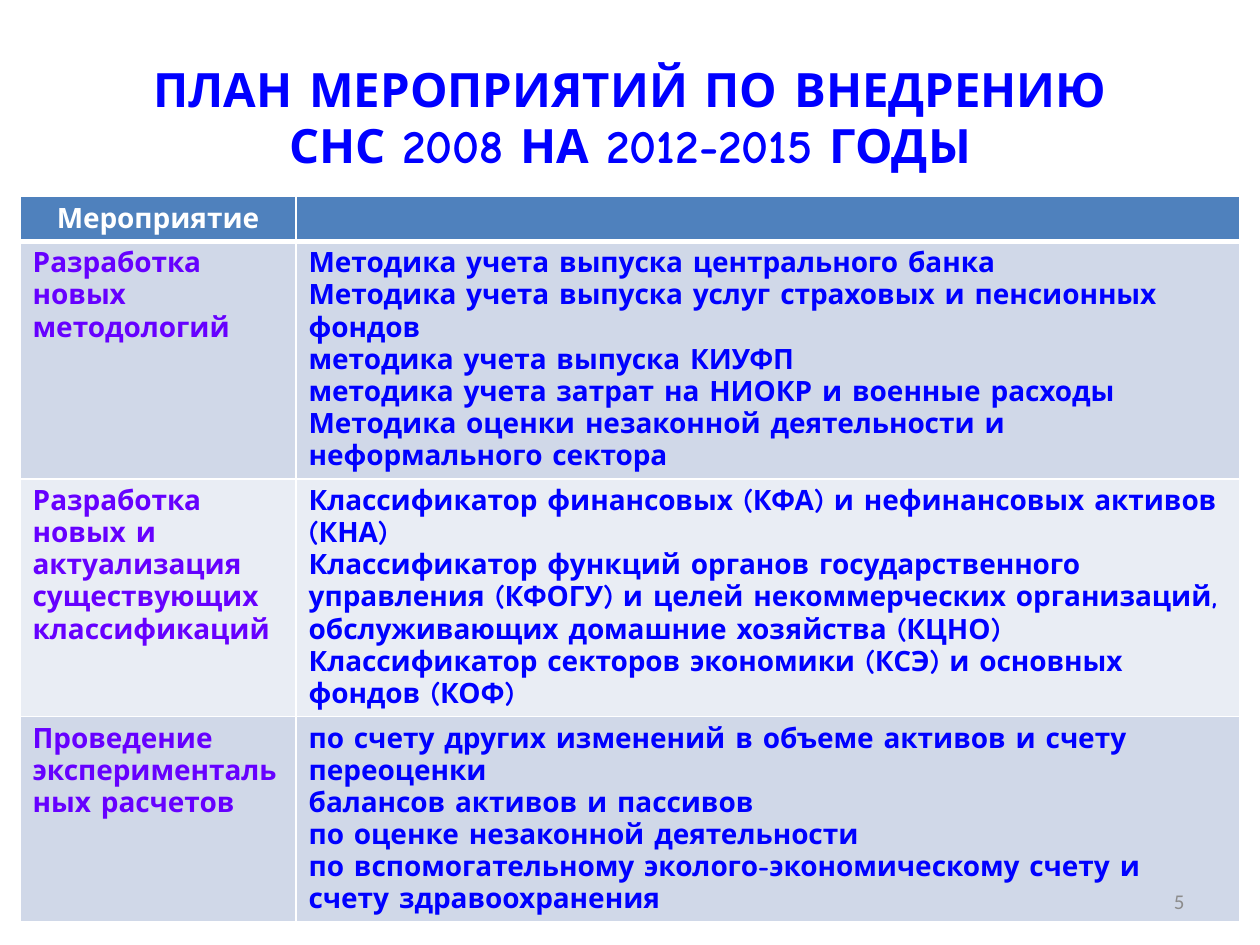
from lxml.etree import SubElement
from pptx import Presentation
from pptx.dml.color import RGBColor
from pptx.enum.text import MSO_ANCHOR, PP_ALIGN
from pptx.oxml.ns import qn
from pptx.util import Inches, Pt

TITLE = "ПЛАН МЕРОПРИЯТИЙ ПО ВНЕДРЕНИЮ\vСНС 2008 НА 2012-2015 ГОДЫ"
PAGE_NUMBER = "5"
HEADER = ("Мероприятие", "")
MEASURES = [
    ("Разработка новых методологий", [
        "Методика учета выпуска центрального банка",
        "Методика учета выпуска услуг страховых и пенсионных фондов",
        "методика учета выпуска КИУФП",
        "методика учета затрат на НИОКР и военные расходы",
        "Методика оценки незаконной деятельности и неформального сектора",
    ]),
    ("Разработка новых и актуализация существующих классификаций", [
        "Классификатор финансовых (КФА) и нефинансовых активов (КНА)",
        "Классификатор функций органов государственного управления (КФОГУ) "
        "и целей некоммерческих организаций, обслуживающих домашние "
        "хозяйства (КЦНО)",
        "Классификатор секторов экономики (КСЭ) и основных фондов (КОФ)",
    ]),
    ("Проведение экспериментальных расчетов", [
        "по счету других изменений в объеме активов и счету переоценки",
        "балансов активов и пассивов",
        "по оценке незаконной деятельности",
        "по вспомогательному эколого-экономическому счету и счету "
        "здравоохранения",
    ]),
]
COLUMN_WIDTHS = (2.19, 7.49)
ROW_HEIGHTS = (0.34, 1.88, 1.88, 1.63)

THEME = {
    "font": "Comic Neue", "number_font": "Calibri",
    "title_size": 27, "table_size": 16, "number_size": 12,
    "blue": "0000FF", "violet": "6600FF", "white": "FFFFFF", "gray": "8C8C8C",
    "header": "4F81BD", "bands": ("D0D8E8", "E9EDF4"),
}


def style(paragraph, color, size, font=THEME["font"], bold=True, align=PP_ALIGN.LEFT):
    paragraph.alignment = align
    paragraph.font.name = font
    paragraph.font.size = Pt(size)
    paragraph.font.bold = bold
    paragraph.font.color.rgb = RGBColor.from_string(color)


def add_text(slide, text, box, **look):
    frame = slide.shapes.add_textbox(*map(Inches, box)).text_frame
    frame.word_wrap = True
    frame.vertical_anchor = MSO_ANCHOR.MIDDLE
    frame.text = text
    style(frame.paragraphs[0], **look)


def add_borders(cell, top, bottom):
    """Draw white cell borders; top and bottom are widths in points."""
    properties = cell._tc.get_or_add_tcPr()
    for side, width in (("L", 1), ("R", 1), ("T", top), ("B", bottom)):
        line = SubElement(properties, qn(f"a:ln{side}"), w=str(Pt(width)))
        fill = SubElement(line, qn("a:solidFill"))
        SubElement(fill, qn("a:srgbClr"), val=THEME["white"])


def fill_cell(cell, lines, fill, color, align=PP_ALIGN.LEFT, top=1, bottom=1):
    add_borders(cell, top, bottom)
    cell.fill.solid()
    cell.fill.fore_color.rgb = RGBColor.from_string(fill)
    cell.text = "\n".join(lines)
    for paragraph in cell.text_frame.paragraphs:
        style(paragraph, color, THEME["table_size"], align=align)
        if not paragraph.text:  # an empty line takes its height from its end mark
            end_mark = paragraph._p.get_or_add_endParaRPr()
            end_mark.set("sz", str(THEME["table_size"] * 100))
            SubElement(end_mark, qn("a:latin"), typeface=THEME["font"])


def add_measures(slide):
    table = slide.shapes.add_table(
        len(ROW_HEIGHTS), len(COLUMN_WIDTHS), Inches(0.16), Inches(1.56),
        Inches(sum(COLUMN_WIDTHS)), Inches(sum(ROW_HEIGHTS))).table
    for column, width in zip(table.columns, COLUMN_WIDTHS):
        column.width = Inches(width)
    for row, height in zip(table.rows, ROW_HEIGHTS):
        row.height = Inches(height)

    for column, heading in enumerate(HEADER):
        fill_cell(table.cell(0, column), [heading], THEME["header"],
                  THEME["white"], PP_ALIGN.CENTER, bottom=3)
    for row, (measure, steps) in enumerate(MEASURES, start=1):
        band = THEME["bands"][(row - 1) % 2]
        top = 3 if row == 1 else 1
        fill_cell(table.cell(row, 0), [measure], band, THEME["violet"], top=top)
        fill_cell(table.cell(row, 1), steps, band, THEME["blue"], top=top)


def main():
    presentation = Presentation()
    presentation.slide_width = Inches(10)
    presentation.slide_height = Inches(7.5)
    slide = presentation.slides.add_slide(presentation.slide_layouts[6])
    add_measures(slide)
    add_text(slide, PAGE_NUMBER, (7.17, 6.95, 2.33, 0.4), color=THEME["gray"],
             size=THEME["number_size"], font=THEME["number_font"], bold=False,
             align=PP_ALIGN.RIGHT)
    add_text(slide, TITLE, (0.5, 0.3, 9, 1.25), color=THEME["blue"],
             size=THEME["title_size"], align=PP_ALIGN.CENTER)
    presentation.save("out.pptx")


if __name__ == "__main__":
    main()
